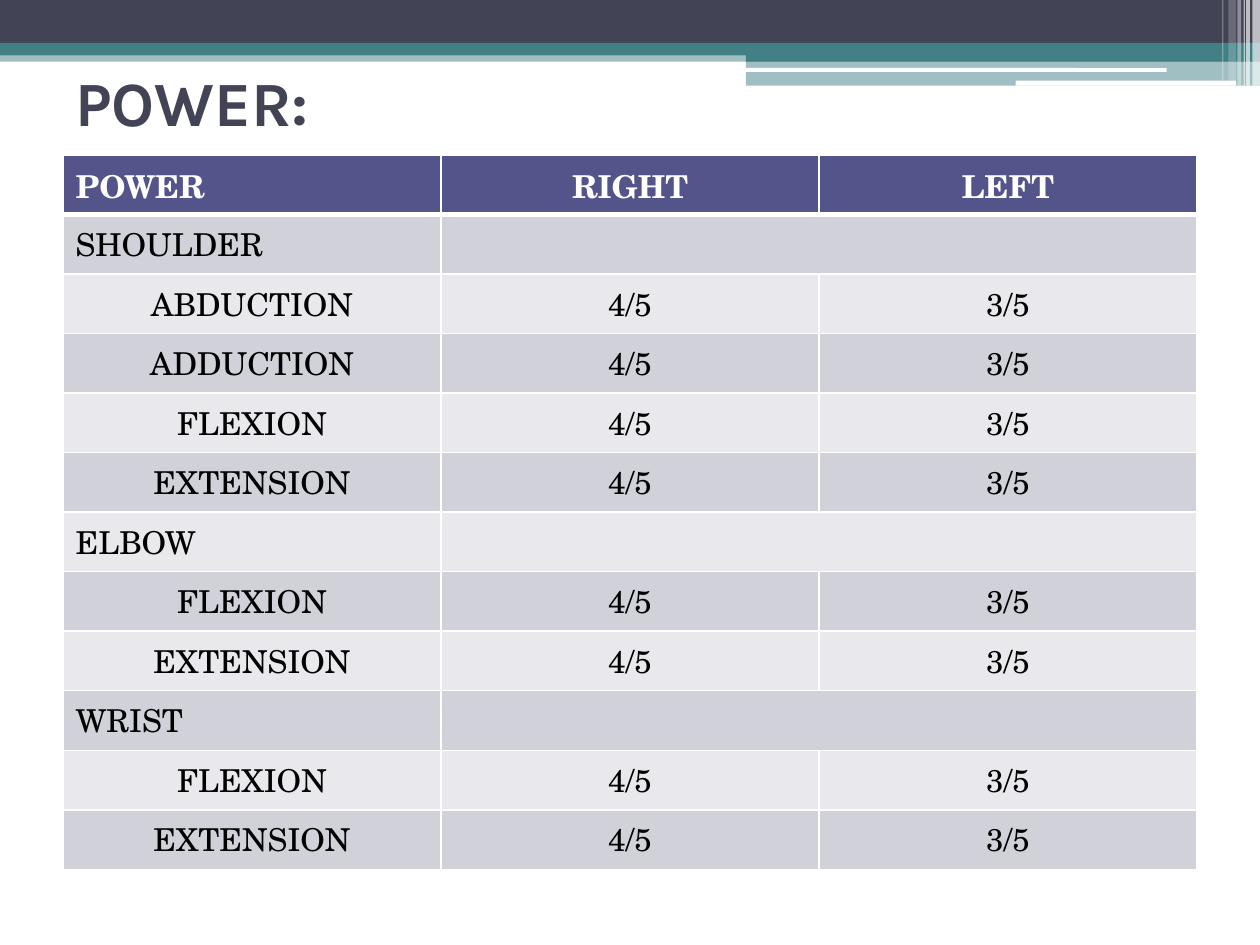
from lxml.etree import SubElement
from pptx import Presentation
from pptx.dml.color import RGBColor as RGB
from pptx.enum.shapes import MSO_SHAPE as SHAPE
from pptx.enum.text import MSO_ANCHOR as ANCHOR, PP_ALIGN as ALIGN
from pptx.oxml import parse_xml
from pptx.oxml.ns import nsdecls, qn
from pptx.util import Inches, Pt

INK = {"dark": "424456", "teal": "438086", "white": "FFFFFF", "black": "000000",
       "head": "53548A", "odd": "D1D1DA", "even": "E9E9ED"}


def style(par, face, size, ink, bold):
    for run in par.runs:
        font = run.font
        font.name, font.size, font.bold = face, Pt(size), bold
        font.color.rgb = RGB.from_string(INK[ink])


def edge(cell, widths):
    """Draw white borders, widths in points: left, right, top, bottom."""
    props = cell._tc.get_or_add_tcPr()
    for i, (side, width) in enumerate(zip("LRTB", widths)):
        props.insert(i, parse_xml(
            f'<a:ln{side} {nsdecls("a")} w="{Pt(width)}"><a:solidFill>'
            f'<a:srgbClr val="{INK["white"]}"/></a:solidFill></a:ln{side}>'))


deck = Presentation()
deck.slide_width, deck.slide_height = Inches(10), Inches(7.5)
slide = deck.slides.add_slide(deck.slide_layouts[6])

# Header bands: left, top, width, height, colour, opacity in percent
bands = [
    (0, 0.4, 10, 0.09, "teal", 50),
    (0, 0, 10, 0.34, "dark", 100),
    (0, 0.34, 10, 0.1, "teal", 100),
    (5.92, 0.39, 4.08, 0.1, "teal", 100),
    (5.92, 0.48, 4.08, 0.2, "teal", 50),
]
lines = [
    (5.91, 0.54, 3.35, 0.03, "white", 100),
    (8.06, 0.64, 1.75, 0.04, "white", 100),
]
stripes = [(x, 0, w, h, "white", a) for x, w, h, a in [
    (9.94, 0.06, 0.68, 65), (9.89, 0.03, 0.68, 65), (9.87, 0.01, 0.68, 60),
    (9.82, 0.03, 0.68, 40), (9.75, 0.06, 0.64, 20), (9.7, 0.01, 0.64, 30)]]

for *box, ink, alpha in bands + lines + stripes:
    is_line = (*box, ink, alpha) in lines
    kind = SHAPE.ROUNDED_RECTANGLE if is_line else SHAPE.RECTANGLE
    band = slide.shapes.add_shape(kind, *map(Inches, box))
    band.shadow.inherit = False
    band.line.fill.background()
    band.fill.solid()
    band.fill.fore_color.rgb = RGB.from_string(INK[ink])
    if alpha < 100:
        tint = band.fill._xPr.find(".//" + qn("a:srgbClr"))
        SubElement(tint, qn("a:alpha"), val=str(alpha * 1000))

# Title
title = slide.shapes.add_textbox(Inches(0.5), Inches(0.3), Inches(2.14), Inches(1.01))
frame = title.text_frame
frame.word_wrap = True
frame.vertical_anchor = ANCHOR.MIDDLE
frame.text = "POWER:"
style(frame.paragraphs[0], "Karla", 36, "dark", True)

# Power table: each joint has a heading row, then its movements
joints = {
    "SHOULDER": ["ABDUCTION", "ADDUCTION", "FLEXION", "EXTENSION"],
    "ELBOW": ["FLEXION", "EXTENSION"],
    "WRIST": ["FLEXION", "EXTENSION"],
}
rows = [("POWER", "RIGHT", "LEFT")]
for joint, moves in joints.items():
    rows.append((joint, "", ""))
    rows += [(move, "4/5", "3/5") for move in moves]

table = slide.shapes.add_table(len(rows), 3, Inches(0.5), Inches(1.23),
                               Inches(9), Inches(5.67)).table
for r, row in enumerate(rows):
    head = r == 0
    fill = "head" if head else "odd" if r % 2 else "even"
    for c, text in enumerate(row):
        cell = table.cell(r, c)
        cell.text = text
        cell.fill.solid()
        cell.fill.fore_color.rgb = RGB.from_string(INK[fill])
        edge(cell, (1, 1, 3 if r == 1 else 1, 3 if head else 1))
        par = cell.text_frame.paragraphs[0]
        left = head and c == 0 or row[0] in joints
        par.alignment = ALIGN.LEFT if left else ALIGN.CENTER
        style(par, "TeX Gyre Schola", 18, "white" if head else "black", head)
    if row[0] in joints:
        table.cell(r, 1).merge(table.cell(r, 2))

deck.save("out.pptx")
